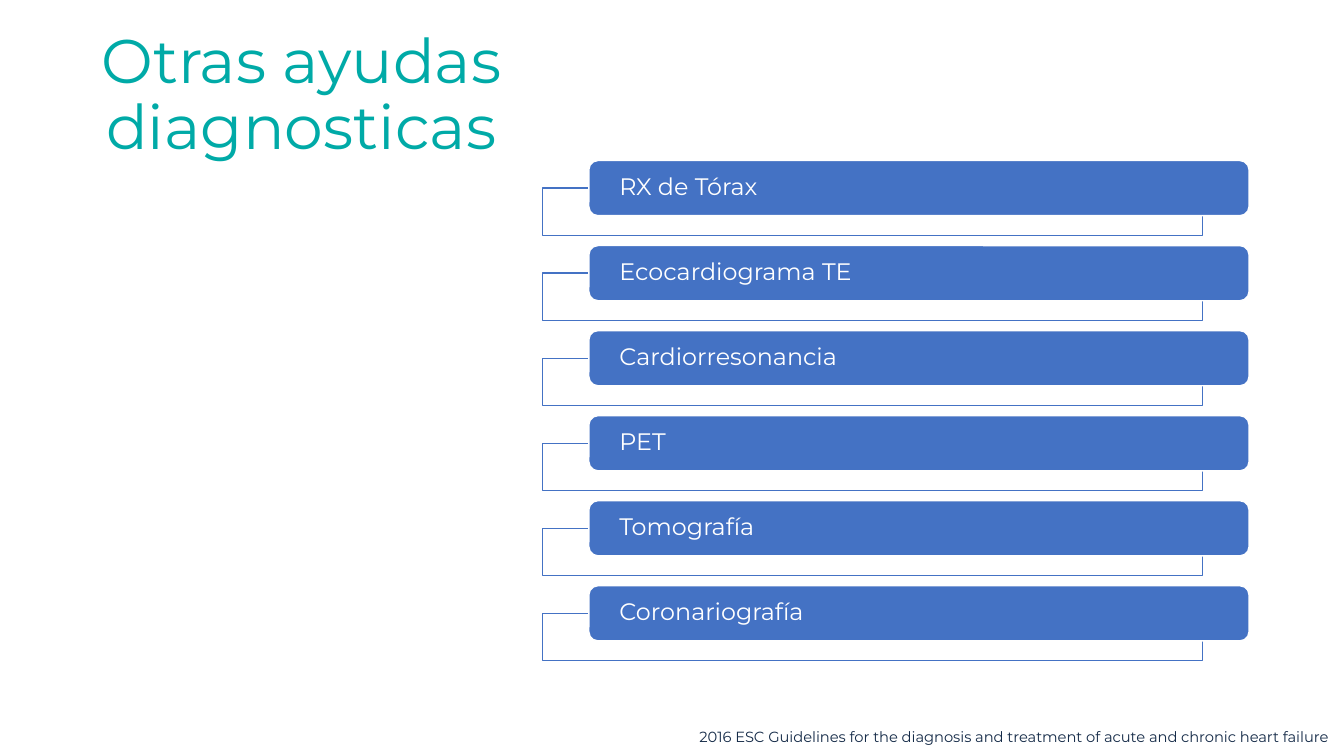
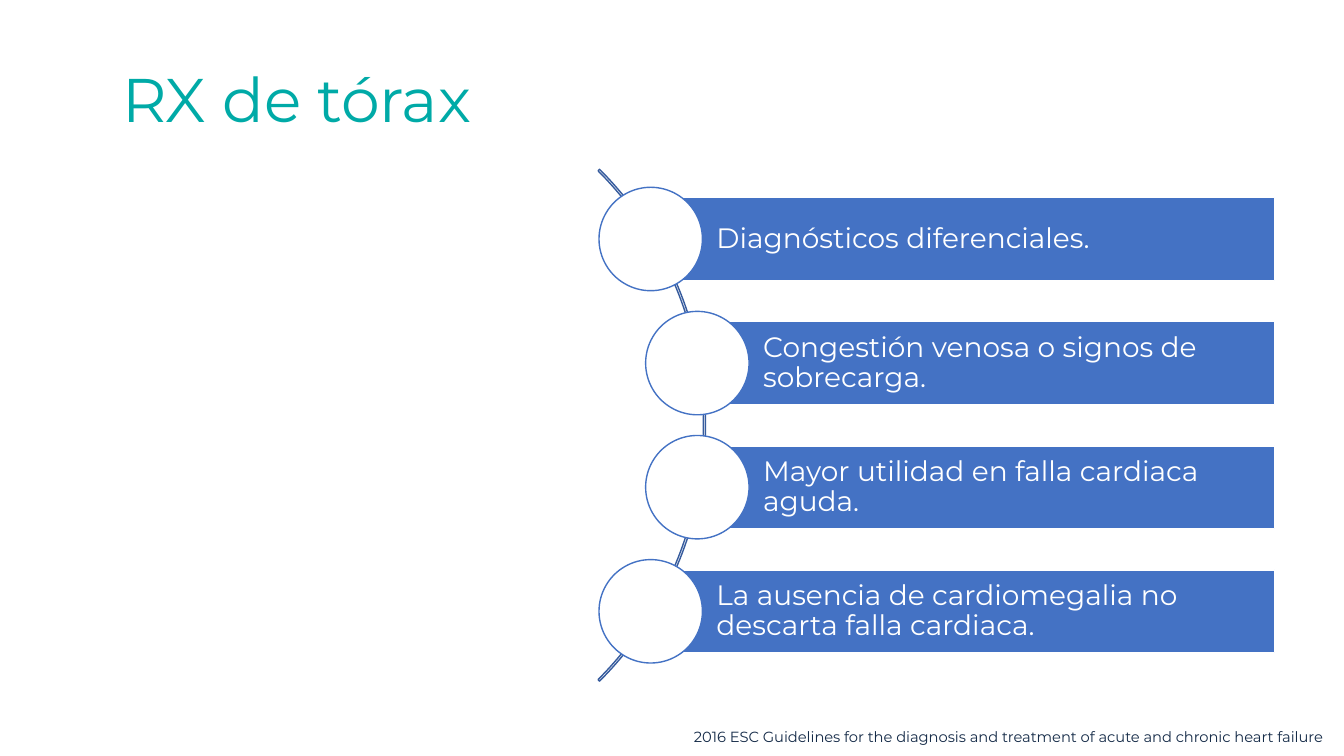
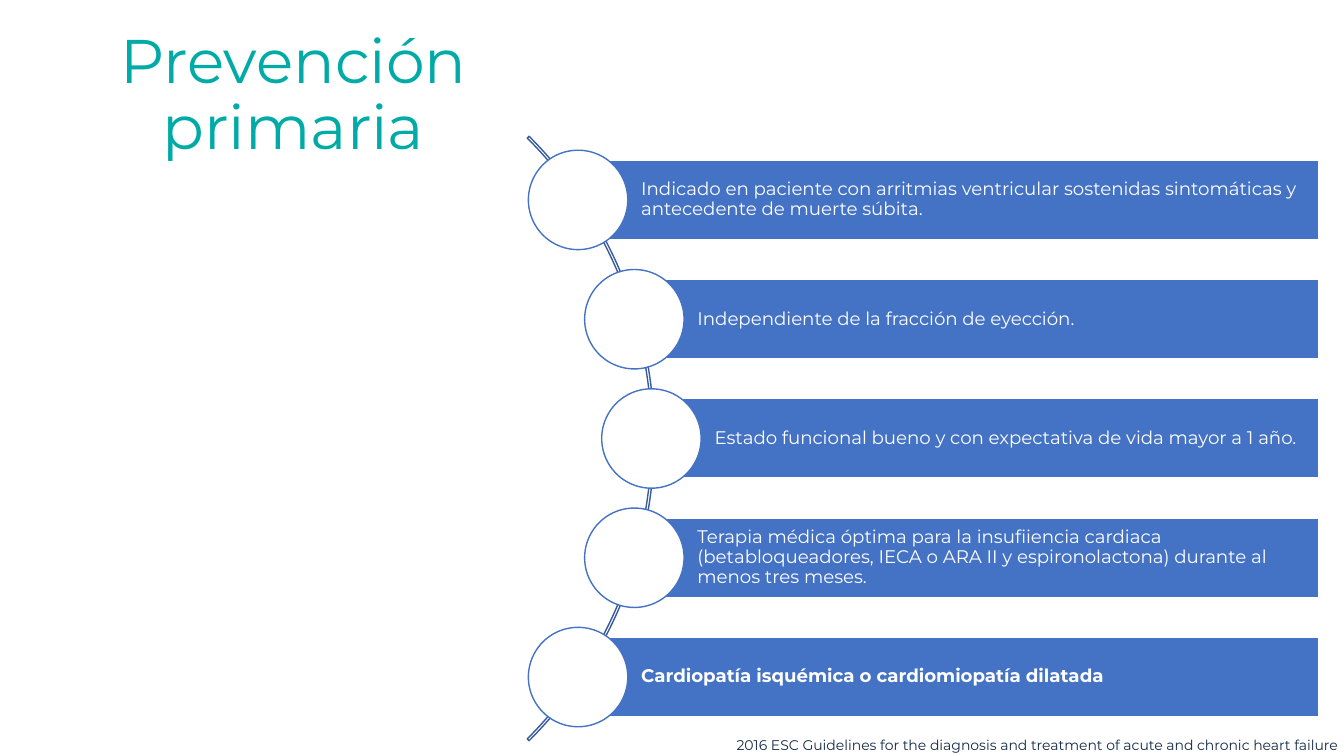
from dataclasses import dataclass
from math import sqrt

from pptx import Presentation
from pptx.dml.color import RGBColor
from pptx.enum import shapes, text
from pptx.oxml import parse_xml
from pptx.oxml.ns import nsdecls
from pptx.util import Pt


@dataclass(frozen=True)
class Theme:
    width: float = 960
    height: float = 540
    font: str = "Montserrat"
    teal: str = "00AAA7"
    blue: str = "4472C4"
    dark_blue: str = "365B9D"
    navy: str = "152B48"
    white: str = "FFFFFF"
    title_size: float = 44
    step_size: float = 17
    line: float = 1
    spacing: float = 0.9


T = Theme()
SHAPE = shapes.MSO_SHAPE
ALIGN = text.PP_ALIGN
CITATION = ("2016 ESC Guidelines for the diagnosis and treatment "
            "of acute and chronic heart failure")

STEPS = ["RX de Tórax", "Ecocardiograma TE", "Cardiorresonancia",
         "PET", "Tomografía", "Coronariografía"]

XRAY = ["Diagnósticos diferenciales.",
        "Congestión venosa o signos de sobrecarga.",
        "Mayor utilidad en falla cardiaca aguda.",
        "La ausencia de cardiomegalia no descarta falla cardiaca."]

PREVENTION = [
    "Indicado en paciente con arritmias ventricular sostenidas sintomáticas "
    "y antecedente de muerte súbita.",
    "Independiente de la fracción de eyección.",
    "Estado funcional bueno y con expectativa de vida mayor a 1 año.",
    "Terapia médica óptima para la insufiiencia cardiaca (betabloqueadores, "
    "IECA o ARA II y espironolactona) durante al menos tres meses.",
    "Cardiopatía isquémica o cardiomiopatía dilatada"]


def set_attrs(obj, values):
    for name, value in values.items():
        setattr(obj, name, value)


def write(sp, content, size, color, margins, align=ALIGN.LEFT,
          anchor=text.MSO_ANCHOR.MIDDLE, spacing=T.spacing, bold=False):
    """Put one paragraph in a shape; margins are left, top, right, bottom."""
    tf = sp.text_frame
    sides = ("margin_left", "margin_top", "margin_right", "margin_bottom")
    set_attrs(tf, {"word_wrap": True, "vertical_anchor": anchor,
                   **{side: Pt(m) for side, m in zip(sides, margins)}})
    p = tf.paragraphs[0]
    set_attrs(p, {"alignment": align, "line_spacing": spacing})
    r = p.add_run()
    r.text = content
    set_attrs(r.font, {"name": T.font, "size": Pt(size), "bold": bold})
    r.font.color.rgb = RGBColor.from_string(color)


def add_shape(s, kind, box, fill, line, alpha=None):
    """Draw a preset shape; fill None leaves it open, alpha is a percentage."""
    sp = s.shapes.add_shape(kind, *map(Pt, box))
    sp.shadow.inherit = False
    sp.line.color.rgb = RGBColor.from_string(line)
    sp.line.width = Pt(T.line)
    if fill is None:
        sp.fill.background()
        return sp
    sp.fill.solid()
    sp.fill.fore_color.rgb = RGBColor.from_string(fill)
    if alpha is not None:
        color = sp.fill._xPr.solidFill[0]
        color.append(parse_xml(
            f'<a:alpha {nsdecls("a")} val="{alpha * 1000}"/>'))
    return sp


def add_title(s, content, left, top, width):
    sp = s.shapes.add_textbox(Pt(left), Pt(top), Pt(width), Pt(104.6))
    write(sp, content, T.title_size, T.teal, (7.2, 3.6, 7.2, 3.6), ALIGN.CENTER)


def add_citation(s, left, top, size=10.5):
    sp = s.shapes.add_textbox(Pt(left), Pt(top), Pt(T.width - left), Pt(20))
    write(sp, CITATION, size, T.navy, (7.2, 3.6, 0, 3.6),
          anchor=text.MSO_ANCHOR.TOP, spacing=1.0)


def add_step_list(s, items, left, top, width, pitch):
    """Rounded bars, each over an open frame shifted left and down."""
    for i, item in enumerate(items):
        y = top + i * pitch
        add_shape(s, SHAPE.RECTANGLE, (left - 33.2, y + 19.7, width, 33.9),
                  T.white, T.blue, alpha=90)
        bar = add_shape(s, SHAPE.ROUNDED_RECTANGLE, (left, y, width, 39.4),
                        T.blue, T.white)
        write(bar, item, T.step_size, T.white, (19.9, 0, 19.9, 0))


def add_arc_list(s, items, center, diameter, right, bar_h, size, bold_last=False):
    """Bars that start at circles set along the right side of an arc."""
    cx, cy = center
    radius = diameter / 2
    arc = add_shape(s, SHAPE.BLOCK_ARC,
                    (cx - radius, cy - radius, diameter, diameter),
                    None, T.dark_blue)
    for i, value in enumerate((189, 27, 0.003)):
        arc.adjustments[i] = value
    circle, pitch, margin = 1.25 * bar_h, 1.5 * bar_h, 0.2 * size
    last = len(items) - 1
    for i, item in enumerate(items):
        dy = (i - last / 2) * pitch
        x, y = cx + sqrt((radius - 2) ** 2 - dy ** 2), cy + dy
        bar = add_shape(s, SHAPE.RECTANGLE,
                        (x, y - bar_h / 2, right - x, bar_h), T.blue, T.white)
        write(bar, item, size, T.white, (0.794 * bar_h, margin, margin, margin),
              bold=bold_last and i == last)
        add_shape(s, SHAPE.OVAL,
                  (x - circle / 2, y - circle / 2, circle, circle),
                  T.white, T.blue)


def main():
    prs = Presentation()
    set_attrs(prs, {"slide_width": Pt(T.width), "slide_height": Pt(T.height)})
    blank = prs.slide_layouts[6]

    s = prs.slides.add_slide(blank)
    add_title(s, "Otras ayudas diagnosticas", 27.4, 16.6, 375.8)
    add_step_list(s, STEPS, left=420.6, top=114.7, width=471.6, pitch=60.74)
    add_citation(s, 492.5, 516.2)

    s = prs.slides.add_slide(blank)
    add_title(s, "RX de tórax", 23.8, 20.9, 376.6)
    add_arc_list(s, XRAY, center=(245.5, 303.7), diameter=517,
                 right=910.6, bar_h=59.1, size=20)
    add_citation(s, 488.6, 516.2)

    s = prs.slides.add_slide(blank)
    add_title(s, "Prevención primaria", 29.4, 16.6, 360.8)
    add_arc_list(s, PREVENTION, center=(162, 313.2), diameter=610.6,
                 right=942.1, bar_h=56.8, size=13, bold_last=True)
    add_citation(s, 519.1, 522.4, size=10)

    prs.save("out.pptx")


if __name__ == "__main__":
    main()
